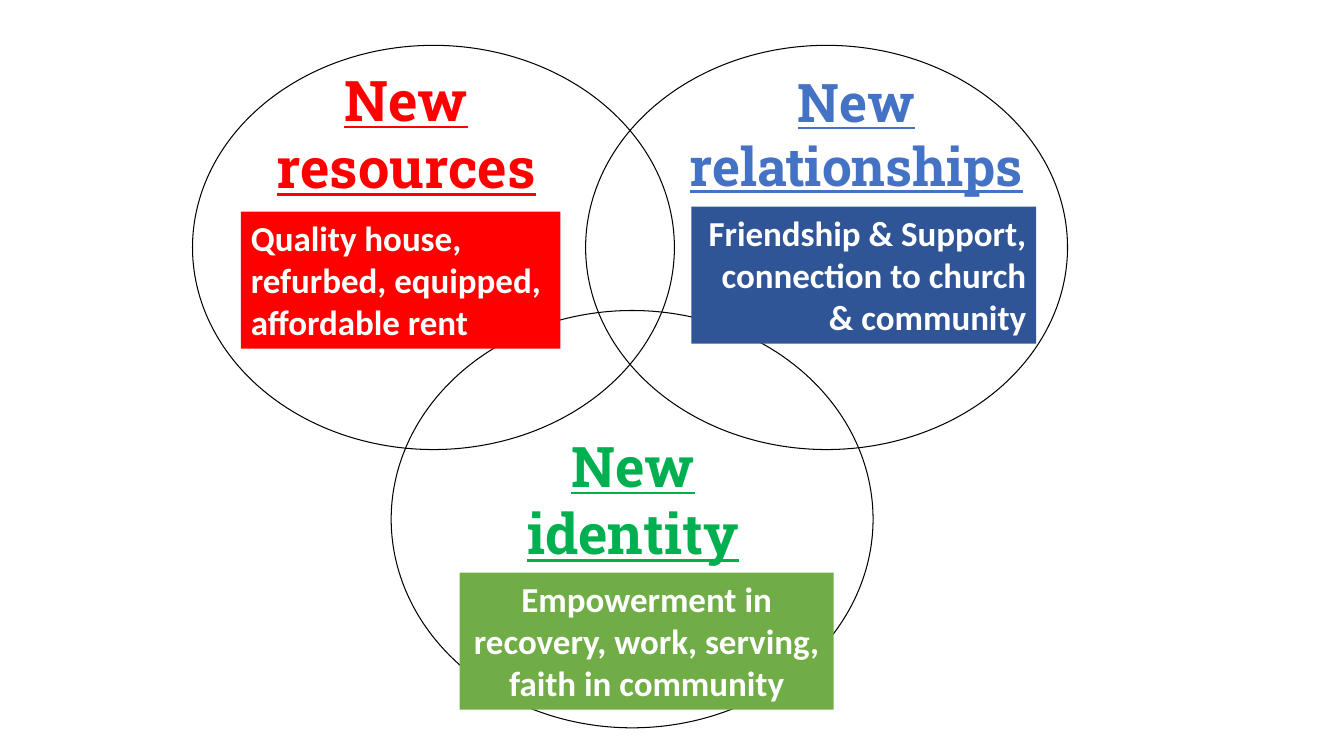
from dataclasses import dataclass

import pptx
import pptx.dml.color
import pptx.enum.shapes
import pptx.enum.text
import pptx.oxml.ns
import pptx.util

Pt = pptx.util.Pt
SHAPE = pptx.enum.shapes.MSO_SHAPE
ALIGN = pptx.enum.text.PP_ALIGN


@dataclass(frozen=True)
class Theme:
    heading_font: str = "Roboto Slab"
    body_font: str = "Calibri"
    outline: str = "000000"
    white: str = "FFFFFF"
    red: str = "FF0000"
    blue: str = "4472C4"
    navy: str = "2F5597"
    emerald: str = "00B050"
    green: str = "70AD47"
    heading: float = 40
    heading_small: float = 38
    body: float = 25


THEME = Theme()


def rgb(value):
    return pptx.dml.color.RGBColor.from_string(value)


def write(sp, text, *, font, size, color, align=ALIGN.CENTER, underline=False):
    """Fill a shape with one bold wrapped paragraph."""
    tf = sp.text_frame
    tf.word_wrap = True
    tf.vertical_anchor = pptx.enum.text.MSO_ANCHOR.TOP
    tf.auto_size = pptx.enum.text.MSO_AUTO_SIZE.SHAPE_TO_FIT_TEXT
    p = tf.paragraphs[0]
    p.alignment = align
    r = p.add_run()
    r.text = text
    r.font.name = font
    r.font.size = Pt(size)
    r.font.bold = True
    r.font.underline = underline
    r.font.color.rgb = rgb(color)


def add_circle(s, box):
    sp = s.shapes.add_shape(SHAPE.OVAL, *map(Pt, box))
    sp.shadow.inherit = False
    sp.fill.background()
    sp.line.color.rgb = rgb(THEME.outline)
    sp.line.width = Pt(0.75)


def add_heading(s, text, box, color, size=THEME.heading):
    sp = s.shapes.add_textbox(*map(Pt, box))
    write(sp, text, font=THEME.heading_font, size=size, color=color, underline=True)


def add_panel(s, text, box, fill, align):
    sp = s.shapes.add_shape(SHAPE.RECTANGLE, *map(Pt, box))
    sp.shadow.inherit = False
    sp.fill.solid()
    sp.fill.fore_color.rgb = rgb(fill)
    sp.line.fill.background()
    write(sp, text, font=THEME.body_font, size=THEME.body, color=THEME.white, align=align)


def main():
    prs = pptx.Presentation()
    prs.slide_width, prs.slide_height = Pt(960), Pt(540)
    s = prs.slides.add_slide(prs.slide_layouts[6])

    for box in [(137.5, 32.4, 344.2, 288.7),
                (279.4, 221.8, 344.2, 298.1),
                (418.3, 32.4, 344.2, 288.7)]:
        add_circle(s, box)

    add_heading(s, "New resources", (180.7, 43.2, 218.9, 104.4), THEME.red)
    add_heading(s, "New identity", (353.5, 304.6, 197.3, 104.4), THEME.emerald)
    add_heading(s, "New relationships", (474.5, 46.1, 274.3, 99.4), THEME.blue,
                THEME.heading_small)

    add_panel(s, "Quality house, refurbed, equipped, affordable rent",
              (172.1, 151.2, 228.2, 97.9), THEME.red, ALIGN.LEFT)
    add_panel(s, "Friendship & Support, connection to church & community",
              (493.9, 147.6, 246.2, 97.9), THEME.navy, ALIGN.RIGHT)
    add_panel(s, "Empowerment in recovery, work, serving, faith in community",
              (328.3, 409, 267.1, 97.9), THEME.green, ALIGN.CENTER)

    prs.save("out.pptx")


if __name__ == "__main__":
    main()
